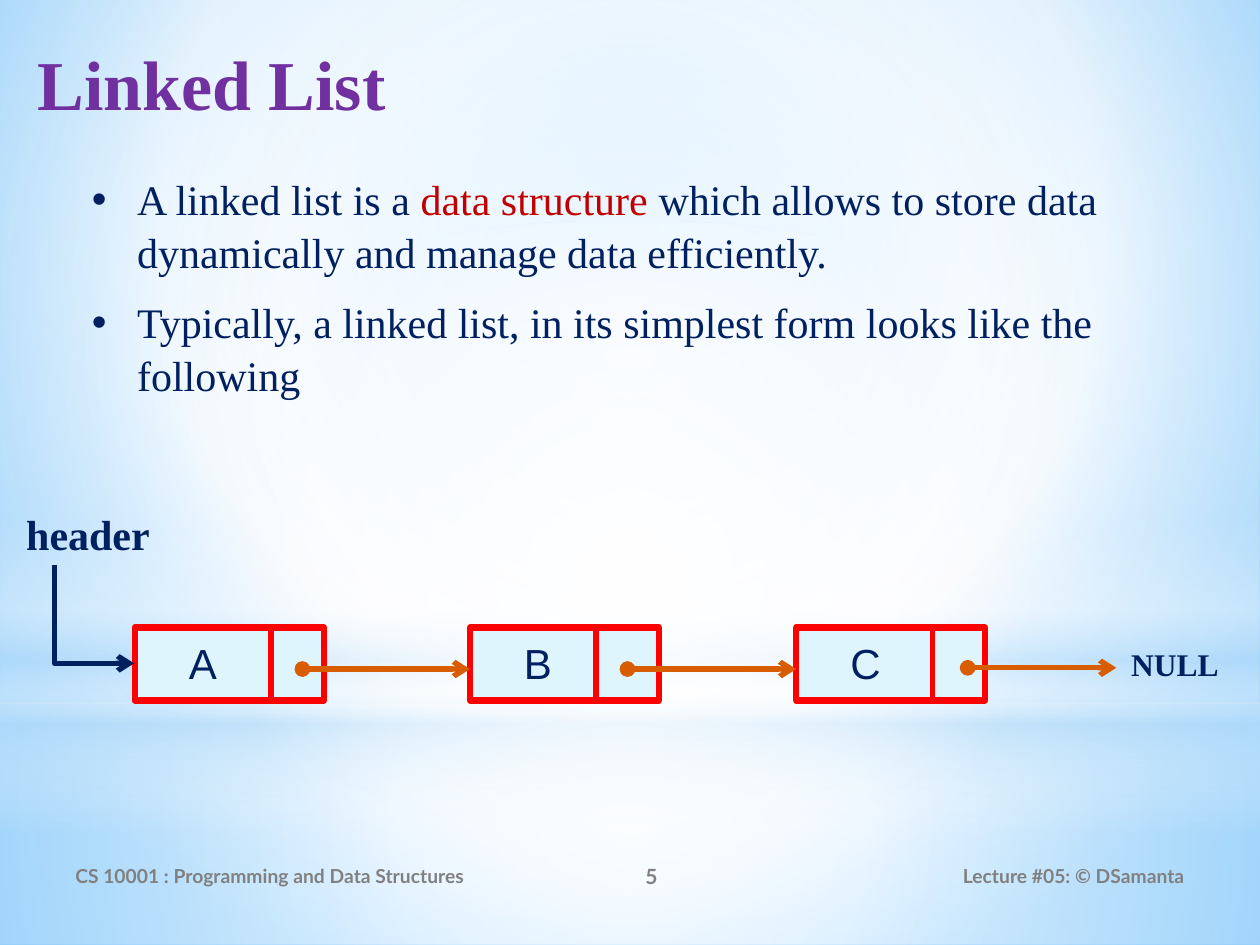
from lxml import etree
from pptx import Presentation
from pptx.dml.color import RGBColor
from pptx.enum.shapes import MSO_CONNECTOR as Connector, MSO_SHAPE as Shape
from pptx.enum.text import MSO_ANCHOR as Anchor, PP_ALIGN as Align
from pptx.oxml import parse_xml
from pptx.oxml.ns import nsdecls, qn
from pptx.util import Inches, Pt

PURPLE = RGBColor(0x70, 0x30, 0xA0)
NAVY = RGBColor(0x00, 0x20, 0x60)
CRIMSON = RGBColor(0xC0, 0x00, 0x00)
GREY = RGBColor(0x80, 0x80, 0x80)
RED = RGBColor(0xFF, 0x00, 0x00)
ORANGE = RGBColor(0xD8, 0x5C, 0x00)
ICE = RGBColor(0xDF, 0xF5, 0xFD)
WHITE = RGBColor(0xFF, 0xFF, 0xFF)
PALE = RGBColor(0xB4, 0xDC, 0xFA)
SKY = RGBColor(0x9E, 0xD5, 0xFF)
BLUE = RGBColor(0x5B, 0xB9, 0xFF)

SERIF = "Times New Roman"
CENTER = (50, 50, 50, 50)

BACKGROUND = [(0, SKY, 100), (60, WHITE, 100), (100, BLUE, 100)]
LAYERS = [
    (Shape.RECTANGLE, (0, 5.58, 10, 1.92), CENTER,
     [(0, WHITE, 91), (37, WHITE, 76), (100, PALE, 79)]),
    (Shape.RECTANGLE, (0, 0, 10, 5.58), CENTER,
     [(0, WHITE, 89), (48, WHITE, 62), (100, PALE, 79)]),
    (Shape.RECTANGLE, (0, 4.12, 10, 2.5), None,
     [(0, WHITE, 0), (29, WHITE, 30), (45, PALE, 40),
      (55, WHITE, 26), (65, PALE, 60), (100, WHITE, 0)]),
    (Shape.OVAL, (0, 1.75, 10, 5.58), CENTER, [(0, WHITE, 100), (56, WHITE, 0)]),
]

TITLE_FONT = {"name": SERIF, "size": Pt(40), "bold": True}
BODY_FONT = {"name": SERIF, "size": Pt(24)}
HEADER_FONT = {"name": SERIF, "size": Pt(24), "bold": True}
NULL_FONT = {"name": SERIF, "size": Pt(18), "bold": True}
NODE_FONT = {"name": "Arial", "size": Pt(24)}
FOOTER_FONT = {"name": "Lato", "size": Pt(11), "bold": True}
NUMBER_FONT = {**FOOTER_FONT, "size": Pt(12)}

FOOTERS = [
    ("CS 10001 : Programming and Data Structures", 0.5, 3.67, Align.LEFT, FOOTER_FONT),
    ("5", 4.17, 2, Align.CENTER, NUMBER_FONT),
    ("Lecture #05: © DSamanta", 6.75, 2.75, Align.RIGHT, FOOTER_FONT),
]
BULLETS = [
    [("A linked list is a ", NAVY), ("data structure ", CRIMSON),
     ("which allows to store data dynamically and manage data efficiently.", NAVY)],
    [("Typically, a linked list, in its simplest form looks like the following", NAVY)],
]
NODES = [("A", 1.07, 2.15), ("B", 3.73, 4.73), ("C", 6.32, 7.4)]
NODE_TOP, NODE_WIDTH, NODE_HEIGHT = 4.98, 1.5, 0.58
POINTERS = [(2.4, 3.73, 5.31), (4.98, 6.32, 5.31), (7.68, 8.86, 5.3)]


def gradient(stops, focus):
    fill = parse_xml(f'<a:gradFill {nsdecls("a")} rotWithShape="1"><a:gsLst/></a:gradFill>')
    for position, color, opacity in stops:
        stop = etree.SubElement(fill[0], qn("a:gs"), pos=str(position * 1000))
        tint = etree.SubElement(stop, qn("a:srgbClr"), val=str(color))
        if opacity < 100:
            etree.SubElement(tint, qn("a:alpha"), val=str(opacity * 1000))
    if focus:
        route = etree.SubElement(fill, qn("a:path"), {"path": "circle"})
        sides = {side: str(value * 1000) for side, value in zip("ltrb", focus)}
        etree.SubElement(route, qn("a:fillToRect"), sides)
    else:
        etree.SubElement(fill, qn("a:lin"), ang="5400000", scaled="0")
    return fill


def paint(fill, properties, stops, focus):
    fill.solid()
    solid = properties.find(qn("a:solidFill"))
    properties.replace(solid, gradient(stops, focus))


def add_block(slide, kind, box):
    shape = slide.shapes.add_shape(kind, *map(Inches, box))
    shape.shadow.inherit = False
    return shape


def add_run(paragraph, text, style, color):
    run = paragraph.add_run()
    run.text = text
    for name, value in style.items():
        setattr(run.font, name, value)
    run.font.color.rgb = color


def add_text(slide, box, text, style, color, align=Align.LEFT, **frame_format):
    frame = slide.shapes.add_textbox(*map(Inches, box)).text_frame
    for name, value in {"word_wrap": True, **frame_format}.items():
        setattr(frame, name, value)
    paragraph = frame.paragraphs[0]
    paragraph.alignment = align
    if text:
        add_run(paragraph, text, style, color)
    return frame


def add_line(slide, start, end, color, width, head=None, tail=None, kind=Connector.STRAIGHT):
    line = slide.shapes.add_connector(kind, *map(Inches, (*start, *end)))
    line.line.color.rgb = color
    line.line.width = Pt(width)
    outline = line.line._get_or_add_ln()
    for tag, arrow in (("a:headEnd", head), ("a:tailEnd", tail)):
        if arrow:
            etree.SubElement(outline, qn(tag), type=arrow)
    etree.SubElement(line._element.spPr, qn("a:effectLst"))
    return line


def add_bullets(slide):
    frame = add_text(slide, (0.51, 1.31, 9.29, 3.23), "", BODY_FONT, NAVY)
    for index, runs in enumerate(BULLETS):
        paragraph = frame.add_paragraph() if index else frame.paragraphs[0]
        paragraph.line_spacing = 1.05
        paragraph.space_after = Pt(10)
        properties = paragraph._p.get_or_add_pPr()
        properties.set("marL", str(Inches(0.48)))
        properties.set("indent", str(Inches(-0.36)))
        color = etree.SubElement(properties, qn("a:buClr"))
        etree.SubElement(color, qn("a:srgbClr"), val=str(NAVY))
        etree.SubElement(properties, qn("a:buFont"), typeface="Arial")
        etree.SubElement(properties, qn("a:buChar"), char="•")
        for text, tint in runs:
            add_run(paragraph, text, BODY_FONT, tint)


def add_list_diagram(slide):
    for _, left, _ in NODES:
        node = add_block(slide, Shape.RECTANGLE, (left, NODE_TOP, NODE_WIDTH, NODE_HEIGHT))
        node.fill.solid()
        node.fill.fore_color.rgb = ICE
        node.line.color.rgb = RED
        node.line.width = Pt(3.5)
    for start, end, y in POINTERS:
        add_line(slide, (start, y), (end, y), ORANGE, 3, "oval", "arrow")
    for label, left, divider in NODES:
        add_line(slide, (divider, NODE_TOP), (divider, NODE_TOP + NODE_HEIGHT), RED, 3.25)
        add_text(slide, (left + 0.33, NODE_TOP, 0.67, 0.5), label, NODE_FONT, NAVY,
                 margin_top=Inches(0.08))
    add_text(slide, (8.88, 5.07, 0.94, 0.4), "NULL", NULL_FONT, NAVY)
    elbow = add_line(slide, (0.36, 4.56), (1.14, 5.19), NAVY, 3, tail="arrow",
                     kind=Connector.ELBOW)
    properties = elbow._element.spPr
    properties.find(qn("a:prstGeom")).set("prst", "bentConnector2")
    placement = properties.find(qn("a:xfrm"))
    placement.set("rot", str(270 * 60000))
    placement.set("flipH", "1")
    add_text(slide, (0.11, 3.99, 1.19, 0.5), "header", HEADER_FONT, NAVY)


def main():
    presentation = Presentation()
    presentation.slide_width, presentation.slide_height = Inches(10), Inches(7.5)
    slide = presentation.slides.add_slide(presentation.slide_layouts[6])
    fill = slide.background.fill
    fill.solid()
    paint(fill, slide._element.cSld.bg.bgPr, BACKGROUND, (20, 10, 20, 60))
    for kind, box, focus, stops in LAYERS:
        layer = add_block(slide, kind, box)
        paint(layer.fill, layer._element.spPr, stops, focus)
        layer.line.fill.background()
    add_text(slide, (0.2, 0.21, 9.53, 1.1), "Linked List", TITLE_FONT, PURPLE,
             margin_top=Inches(0.11))
    for text, left, width, align, style in FOOTERS:
        add_text(slide, (left, 6.75, width, 0.4), text, style, GREY, align,
                 vertical_anchor=Anchor.MIDDLE)
    add_bullets(slide)
    add_list_diagram(slide)
    presentation.save("out.pptx")


if __name__ == "__main__":
    main()
